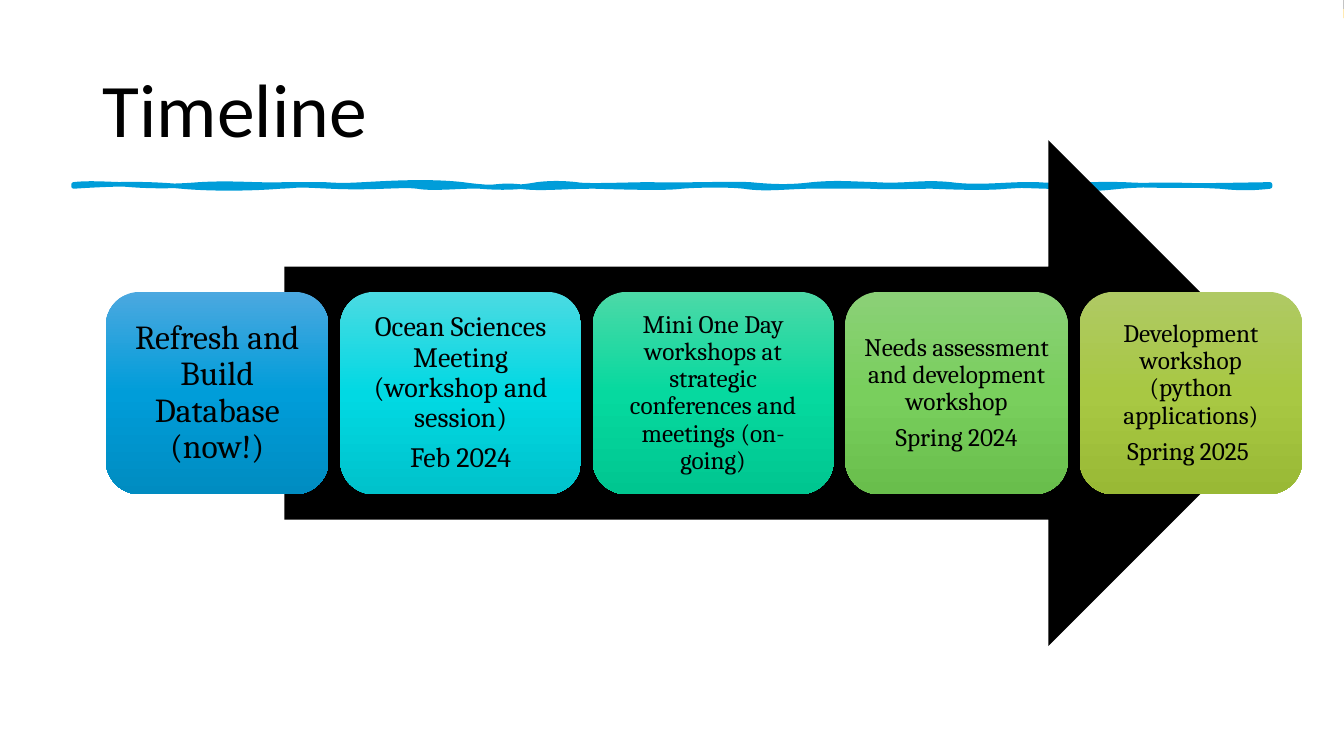
from copy import deepcopy

from lxml import etree
from pptx import Presentation
from pptx.dml.color import RGBColor
from pptx.enum.shapes import MSO_SHAPE
from pptx.enum.text import MSO_ANCHOR, MSO_AUTO_SIZE, PP_ALIGN
from pptx.oxml.ns import qn
from pptx.util import Inches, Pt

ARROW, CARD, BAND = MSO_SHAPE.RIGHT_ARROW, MSO_SHAPE.ROUNDED_RECTANGLE, MSO_SHAPE.RECTANGLE
MIDDLE, LEFT, CENTER = MSO_ANCHOR.MIDDLE, PP_ALIGN.LEFT, PP_ALIGN.CENTER

# Content: paragraphs, text size, inset, width, gradient colours
TITLE = "Timeline"
NARROW, WIDE = 2.21, 2.39
STEPS = [
    (["Refresh and Build Database (now!)"],
     24, 0.1, NARROW, ("4BA8E0", "009DD9", "008CC1")),
    (["Ocean Sciences Meeting (workshop and session)", "Feb 2024"],
     20, 0.08, WIDE, ("4BDAE2", "01D9E3", "00C2CB")),
    (["Mini One Day workshops at strategic conferences and meetings (on-going)"],
     18, 0.07, WIDE, ("4CD9A7", "06D99F", "00C690")),
    (["Needs assessment and development workshop", "Spring 2024"],
     18, 0.07, NARROW, ("8BD077", "79CF5D", "69BE4C")),
    (["Development workshop (python applications)", "Spring 2025 "],
     18, 0.07, NARROW, ("AFC964", "A8C843", "99B935")),
]

# Hand-drawn rule: each curve is two control points and the end's x;
# every curve ends on the height of its own edge.
RULE_LEFT, UPPER_Y, LOWER_Y = 0.73, 1.83, 1.85
UPPER_EDGE = [
    (0.89, 1.81, 1.11, 1.83, 1.24), (1.36, 1.84, 1.62, 1.86, 1.98),
    (2.34, 1.81, 2.51, 1.84, 2.84), (3.17, 1.83, 3.07, 1.83, 3.22),
    (3.38, 1.84, 3.42, 1.84, 3.61), (3.8, 1.82, 4.24, 1.79, 4.59),
    (4.94, 1.88, 5.17, 1.86, 5.33), (5.49, 1.81, 5.63, 1.82, 5.72),
    (5.81, 1.85, 6.25, 1.83, 6.46), (6.67, 1.84, 7.23, 1.82, 7.44),
    (7.65, 1.85, 7.82, 1.86, 8.06), (8.3, 1.81, 8.38, 1.82, 8.68),
    (8.99, 1.85, 9.14, 1.8, 9.43), (9.72, 1.87, 10.02, 1.82, 10.29),
    (10.55, 1.85, 10.78, 1.82, 11.15), (11.51, 1.85, 11.99, 1.84, 12.6),
]
LOWER_EDGE = [
    (12.6, 1.84, 12.6, 1.84, 12.6),
    (12.42, 1.87, 12.3, 1.87, 12.1), (11.9, 1.84, 11.49, 1.82, 11.12),
    (10.75, 1.89, 10.7, 1.87, 10.38), (10.05, 1.84, 10.18, 1.84, 9.99),
    (9.8, 1.87, 9.48, 1.86, 9.25), (9.02, 1.85, 8.84, 1.86, 8.63),
    (8.41, 1.85, 8.28, 1.85, 8), (7.73, 1.86, 7.57, 1.88, 7.38),
    (7.19, 1.83, 6.88, 1.84, 6.76), (6.63, 1.87, 6.24, 1.86, 5.9),
    (5.55, 1.85, 5.37, 1.88, 5.15), (4.94, 1.83, 4.91, 1.87, 4.77),
    (4.63, 1.84, 4.3, 1.88, 4.14), (3.99, 1.83, 3.71, 1.87, 3.28),
    (2.86, 1.83, 3.03, 1.84, 2.78), (2.53, 1.87, 2.13, 1.88, 1.8),
    (1.47, 1.82, 1.18, 1.82, 0.73),
]

# Layout
SLIDE_WIDTH, SLIDE_HEIGHT = 40 / 3, 7.5
BAND_HEIGHT = 0.09
BACKDROP = [
    ((0, 0, SLIDE_WIDTH, BAND_HEIGHT), "565656"),
    ((0, BAND_HEIGHT, SLIDE_WIDTH, BAND_HEIGHT), "FFC425"),
    ((0, 0, 13.33, SLIDE_HEIGHT), "FFFFFF"),
]
TITLE_BOX = (0.92, 0.4, 11.5, 1.45)
ARROW_BOX = (2.82, 1.39, 10.09, 5.02)
ROW_LEFT, ROW_RIGHT = 1.05, 12.92
CARD_HEIGHT = ARROW_BOX[3] * 0.4
CARD_TOP = ARROW_BOX[1] + (ARROW_BOX[3] - CARD_HEIGHT) / 2
CARD_GAP = (ROW_RIGHT - ROW_LEFT - sum(step[3] for step in STEPS)) / (len(STEPS) - 1)


def color(value):
    return RGBColor.from_string(value)


def fill_solid(shape, value):
    shape.fill.solid()
    shape.fill.fore_color.rgb = color(value)


def write(frame, paragraphs, size, font, alignment, inset=None, space_after=0):
    frame.word_wrap = True
    frame.auto_size = MSO_AUTO_SIZE.NONE
    frame.vertical_anchor = MIDDLE
    if inset is not None:
        frame.margin_left = frame.margin_right = Inches(inset)
        frame.margin_top = frame.margin_bottom = Inches(inset)
    for index, text in enumerate(paragraphs):
        paragraph = frame.add_paragraph() if index else frame.paragraphs[0]
        paragraph.alignment = alignment
        paragraph.line_spacing = 0.9
        paragraph.space_after = Pt(space_after)
        run = paragraph.add_run()
        run.text = text
        run.font.size = Pt(size)
        run.font.name = font
        run.font.color.rgb = color("000000")


def add_shape(slide, kind, box):
    shape = slide.shapes.add_shape(kind, *map(Inches, box))
    shape.shadow.inherit = False
    shape.line.fill.background()
    return shape


def fill_gradient(shape, colors):
    shape.fill.gradient()
    shape.fill.gradient_angle = 270
    stop_list = shape.fill._xPr.find(qn("a:gradFill")).find(qn("a:gsLst"))
    stop_list.append(deepcopy(stop_list[-1]))
    for index, (stop, value) in enumerate(zip(shape.fill.gradient_stops, colors)):
        stop.position = index / (len(colors) - 1)
        stop.color.rgb = color(value)


def add_rule(slide):
    points = []
    for edge_y, curves in ((UPPER_Y, UPPER_EDGE), (LOWER_Y, LOWER_EDGE)):
        for x1, y1, x2, y2, end_x in curves:
            points += [(x1, y1), (x2, y2), (end_x, edge_y)]
    builder = slide.shapes.build_freeform(Inches(RULE_LEFT), Inches(UPPER_Y))
    builder.add_line_segments([(Inches(x), Inches(y)) for x, y in points], close=True)
    rule = builder.convert_to_shape()
    # Join every three points into one cubic curve
    segments = list(rule._element.iter(qn("a:lnTo")))
    for first in range(0, len(segments), 3):
        curve = etree.Element(qn("a:cubicBezTo"))
        segments[first].addprevious(curve)
        for segment in segments[first:first + 3]:
            curve.append(segment[0])
            segment.getparent().remove(segment)
    rule.shadow.inherit = False
    fill_solid(rule, "009DD9")
    rule.line.color.rgb = color("009DD9")
    rule.line.width = Pt(3.25)


def main():
    presentation = Presentation()
    presentation.slide_width = Inches(SLIDE_WIDTH)
    presentation.slide_height = Inches(SLIDE_HEIGHT)
    slide = presentation.slides.add_slide(presentation.slide_layouts[5])

    # Top bands and white sheet, which leaves a sliver at the right
    for box, value in BACKDROP:
        fill_solid(add_shape(slide, BAND, box), value)

    # Title in front of the sheet, then the rule
    title = slide.shapes.title
    slide.shapes._spTree.append(title._element)
    title.left, title.top, title.width, title.height = map(Inches, TITLE_BOX)
    write(title.text_frame, [TITLE], 54, "Calibri", LEFT)
    add_rule(slide)

    # Arrow behind the steps
    fill_solid(add_shape(slide, ARROW, ARROW_BOX), "000000")

    # Steps from left to right
    left = ROW_LEFT
    for paragraphs, size, inset, width, colors in STEPS:
        card = add_shape(slide, CARD, (left, CARD_TOP, width, CARD_HEIGHT))
        fill_gradient(card, colors)
        write(card.text_frame, paragraphs, size, "Cambria", CENTER, inset, size * 0.35)
        left += width + CARD_GAP

    presentation.save("out.pptx")


if __name__ == "__main__":
    main()
